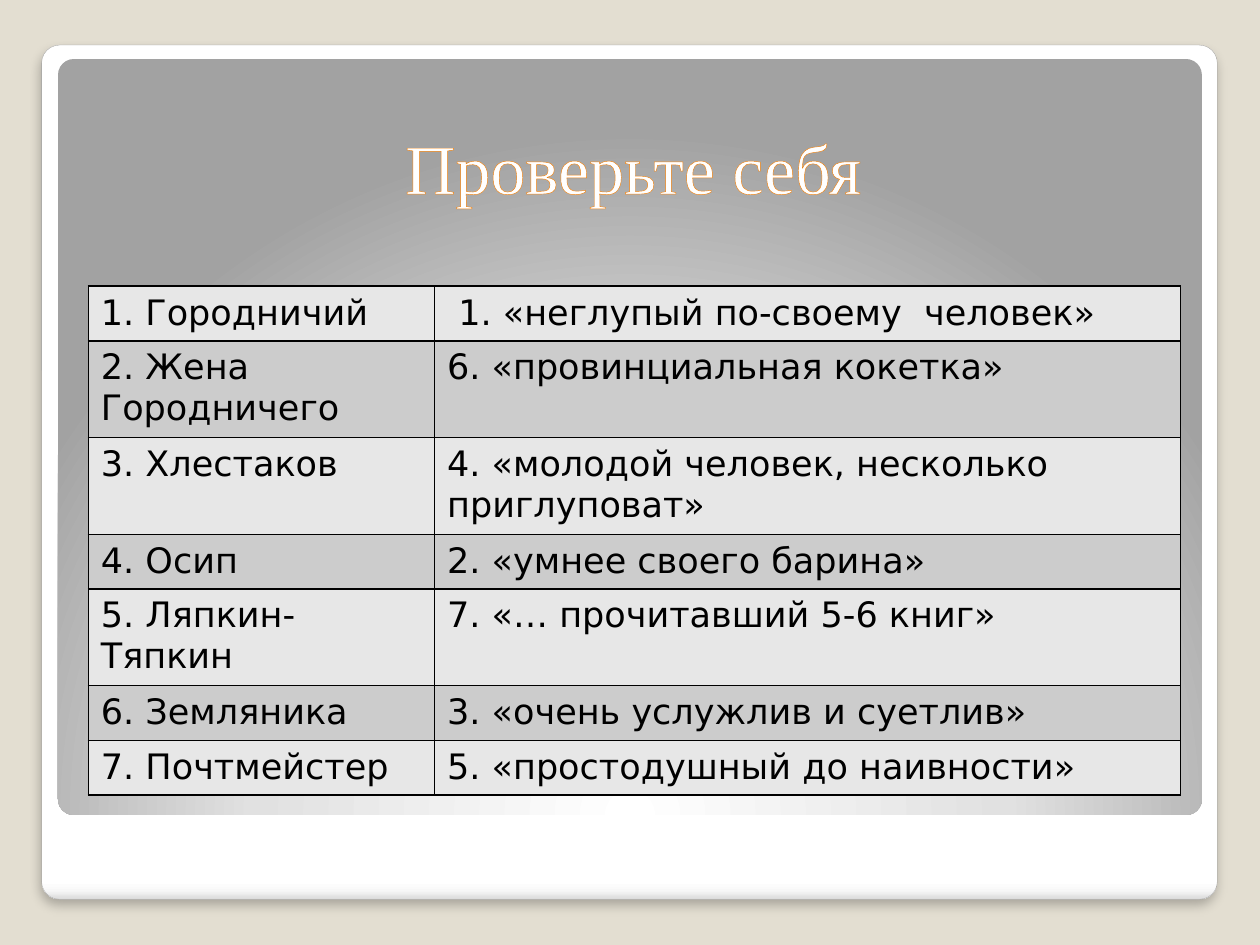
import pptx
import pptx.util
import pptx.dml.color
import pptx.enum.shapes
import pptx.enum.text
import pptx.oxml
import pptx.oxml.ns
from dataclasses import dataclass

Cm = pptx.util.Cm
Pt = pptx.util.Pt
RGB = pptx.dml.color.RGBColor.from_string


@dataclass(frozen=True)
class Theme:
    background: str = "E3DED1"
    frame_line: str = "A4A4A4"
    title: str = "FFFFFF"
    outline: str = "F07F09"
    text: str = "000000"
    bands: tuple = ("E7E7E7", "CCCCCC")
    frame_stops: tuple = ((0, "FFFFFF"), (98, "FFFFFF"), (99, "F7F7F7"), (100, "DADADA"))
    panel_stops: tuple = ((0, "FFFFFF"), (55, "E1E1E1"), (100, "A2A2A2"))
    title_font: str = "Times New Roman"
    body_font: str = "DejaVu Sans"
    title_size: int = 40
    body_size: int = 20


theme = Theme()


def element(tag, attrs, inner):
    ns = pptx.oxml.ns.nsdecls("a")
    return pptx.oxml.parse_xml(f"<a:{tag} {ns} {attrs}>{inner}</a:{tag}>")


def add_card(left, top, width, height, stops, direction):
    card = s.shapes.add_shape(
        pptx.enum.shapes.MSO_SHAPE.ROUNDED_RECTANGLE, Cm(left), Cm(top), Cm(width), Cm(height))
    card.adjustments[0] = 0.021
    card.fill.background()
    card.line.fill.background()
    card.shadow.inherit = False
    colors = "".join(f'<a:gs pos="{pos * 1000}"><a:srgbClr val="{color}"/></a:gs>' for pos, color in stops)
    no_fill = card.element.spPr.find(pptx.oxml.ns.qn("a:noFill"))
    gradient = element("gradFill", 'rotWithShape="1"', f"<a:gsLst>{colors}</a:gsLst>{direction}")
    card.element.spPr.replace(no_fill, gradient)
    return card


prs = pptx.Presentation()
prs.slide_width = Cm(25.4)
prs.slide_height = Cm(19.05)
s = prs.slides.add_slide(prs.slide_layouts[6])
s.background.fill.solid()
s.background.fill.fore_color.rgb = RGB(theme.background)

frame = add_card(0.84, 0.91, 23.7, 17.22, theme.frame_stops, '<a:lin ang="5400000" scaled="0"/>')
frame.line.color.rgb = RGB(theme.frame_line)
frame.line.width = Pt(0.16)
shadow = element(
    "outerShdw",
    f'blurRad="{Pt(6)}" dist="{Pt(4)}" dir="5400000" algn="t" rotWithShape="0"',
    '<a:srgbClr val="000000"><a:alpha val="25000"/></a:srgbClr>')
frame.element.spPr.find(pptx.oxml.ns.qn("a:effectLst")).append(shadow)

add_card(
    1.17, 1.19, 23.06, 15.24, theme.panel_stops,
    '<a:path path="circle"><a:fillToRect l="50000" t="175000" r="50000" b="-75000"/></a:path>')

title = s.shapes.add_textbox(Cm(1.4), Cm(1.4), Cm(22.73), Cm(2.92))
tf = title.text_frame
tf.word_wrap = True
tf.vertical_anchor = pptx.enum.text.MSO_ANCHOR.BOTTOM
p = tf.paragraphs[0]
p.alignment = pptx.enum.text.PP_ALIGN.CENTER
r = p.add_run()
r.text = "Проверьте себя"
r.font.size = Pt(theme.title_size)
r.font.name = theme.title_font
r.font.color.rgb = RGB(theme.title)
outline = f'<a:solidFill><a:srgbClr val="{theme.outline}"/></a:solidFill>'
r.font._element.insert(0, element("ln", f'w="{Pt(0.8)}"', outline))

rows = [
    ("1. Городничий", " 1. «неглупый по-своему  человек»", 1),
    ("2. Жена Городничего", "6. «провинциальная кокетка»", 2),
    ("3. Хлестаков", "4. «молодой человек, несколько приглуповат»", 2),
    ("4. Осип", "2. «умнее своего барина»", 1),
    ("5. Ляпкин-Тяпкин", "7. «… прочитавший 5-6 книг»", 2),
    ("6. Земляника", "3. «очень услужлив и суетлив»", 1),
    ("7. Почтмейстер", "5. «простодушный до наивности»", 1),
]
row_heights = {1: Cm(1.08), 2: Cm(1.89)}
col_widths = (Cm(6.98), Cm(15.04))
total_height = sum(row_heights[lines] for *_, lines in rows)
table = s.shapes.add_table(
    len(rows), len(col_widths), Cm(1.78), Cm(5.77), sum(col_widths), total_height).table
for column, width in zip(table.columns, col_widths):
    column.width = width

border = f'<a:solidFill><a:srgbClr val="{theme.text}"/></a:solidFill>'
for i, (*texts, lines) in enumerate(rows):
    table.rows[i].height = row_heights[lines]
    for j, text in enumerate(texts):
        cell = table.cell(i, j)
        cell.fill.solid()
        cell.fill.fore_color.rgb = RGB(theme.bands[i % 2])
        r = cell.text_frame.paragraphs[0].add_run()
        r.text = text
        r.font.size = Pt(theme.body_size)
        r.font.name = theme.body_font
        r.font.bold = False
        r.font.color.rgb = RGB(theme.text)
        tcPr = cell._tc.get_or_add_tcPr()
        for k, side in enumerate(("lnL", "lnR", "lnT", "lnB")):
            tcPr.insert(k, element(side, f'w="{Pt(1)}"', border))

prs.save("out.pptx")
